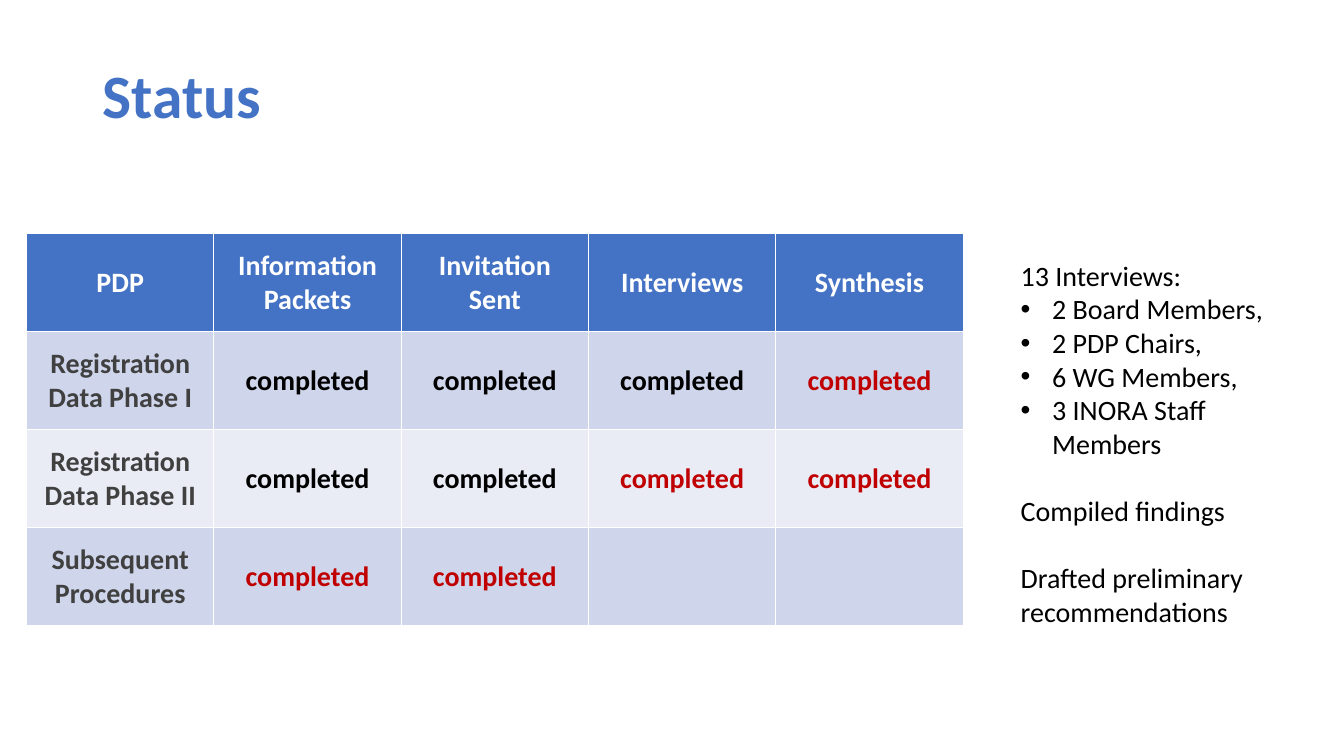
from lxml.etree import SubElement
from pptx import Presentation
from pptx.dml.color import RGBColor
from pptx.enum.text import MSO_ANCHOR as Anchor, PP_ALIGN as Align
from pptx.oxml.ns import qn
from pptx.util import Pt

BLUE, WHITE, BLACK, RED, GREY = "4472C4", "FFFFFF", "000000", "C00000", "404040"
BANDS = ["CFD5EA", "E9EBF5"]


def style_runs(para, size, color, bold=False):
    for run in para.runs:
        run.font.name = "Calibri"
        run.font.size = Pt(size)
        run.font.bold = bold
        run.font.color.rgb = RGBColor.from_string(color)


def fill_cell(cell, text, text_color, fill_color):
    cell.fill.solid()
    cell.fill.fore_color.rgb = RGBColor.from_string(fill_color)
    cell.vertical_anchor = Anchor.MIDDLE
    para = cell.text_frame.paragraphs[0]
    para.text = text
    para.alignment = Align.CENTER
    style_runs(para, 20, text_color, bold=True)


deck = Presentation()
deck.slide_width, deck.slide_height = Pt(960), Pt(540)
slide = deck.slides.add_slide(deck.slide_layouts[5])

# Title
title = slide.shapes.title
title.left, title.top, title.width, title.height = Pt(66), Pt(18), Pt(828), Pt(104.4)
title.text_frame.text = "Status"
title.text_frame.vertical_anchor = Anchor.MIDDLE
title_para = title.text_frame.paragraphs[0]
title_para.alignment = Align.LEFT
title_para.line_spacing = 0.9
style_runs(title_para, 44, BLUE, bold=True)

# Status table: steps completed earlier are black, newly completed ones red
headings = ["PDP", "Information Packets", "Invitation Sent", "Interviews", "Synthesis"]
progress = [
    ("Registration Data Phase I", 3, 1),
    ("Registration Data Phase II", 2, 2),
    ("Subsequent Procedures", 0, 2),
]
table = slide.shapes.add_table(
    len(progress) + 1, len(headings), Pt(19), Pt(167), Pt(669), Pt(280)
).table

for column, heading in enumerate(headings):
    fill_cell(table.cell(0, column), heading, WHITE, BLUE)

for row, (process, earlier, recent) in enumerate(progress, start=1):
    band = BANDS[(row - 1) % 2]
    fill_cell(table.cell(row, 0), process, GREY, band)
    for column in range(1, len(headings)):
        text = "completed" if column <= earlier + recent else ""
        color = BLACK if column <= earlier else RED
        fill_cell(table.cell(row, column), text, color, band)

# Interview notes: text, bulleted, space before
notes = [
    ("13 Interviews:", False, 0),
    ("2 Board Members,", True, 0),
    ("2 PDP Chairs,", True, 0),
    ("6 WG Members,", True, 0),
    ("3 INORA Staff Members", True, 0),
    ("Compiled findings", False, 24),
    ("Drafted preliminary recommendations", False, 24),
]
box = slide.shapes.add_textbox(Pt(722), Pt(181), Pt(202.5), Pt(317.5))
frame = box.text_frame
frame.word_wrap = True
for index, (text, bulleted, gap) in enumerate(notes):
    para = frame.add_paragraph() if index else frame.paragraphs[0]
    para.text = text
    para.space_before = Pt(gap)
    style_runs(para, 20, BLACK)
    if bulleted:
        properties = para._p.get_or_add_pPr()
        properties.set("marL", str(Pt(22.5)))
        properties.set("indent", str(-Pt(22.5)))
        SubElement(properties, qn("a:buFont"), typeface="Arial")
        SubElement(properties, qn("a:buChar"), char="•")

deck.save("out.pptx")
